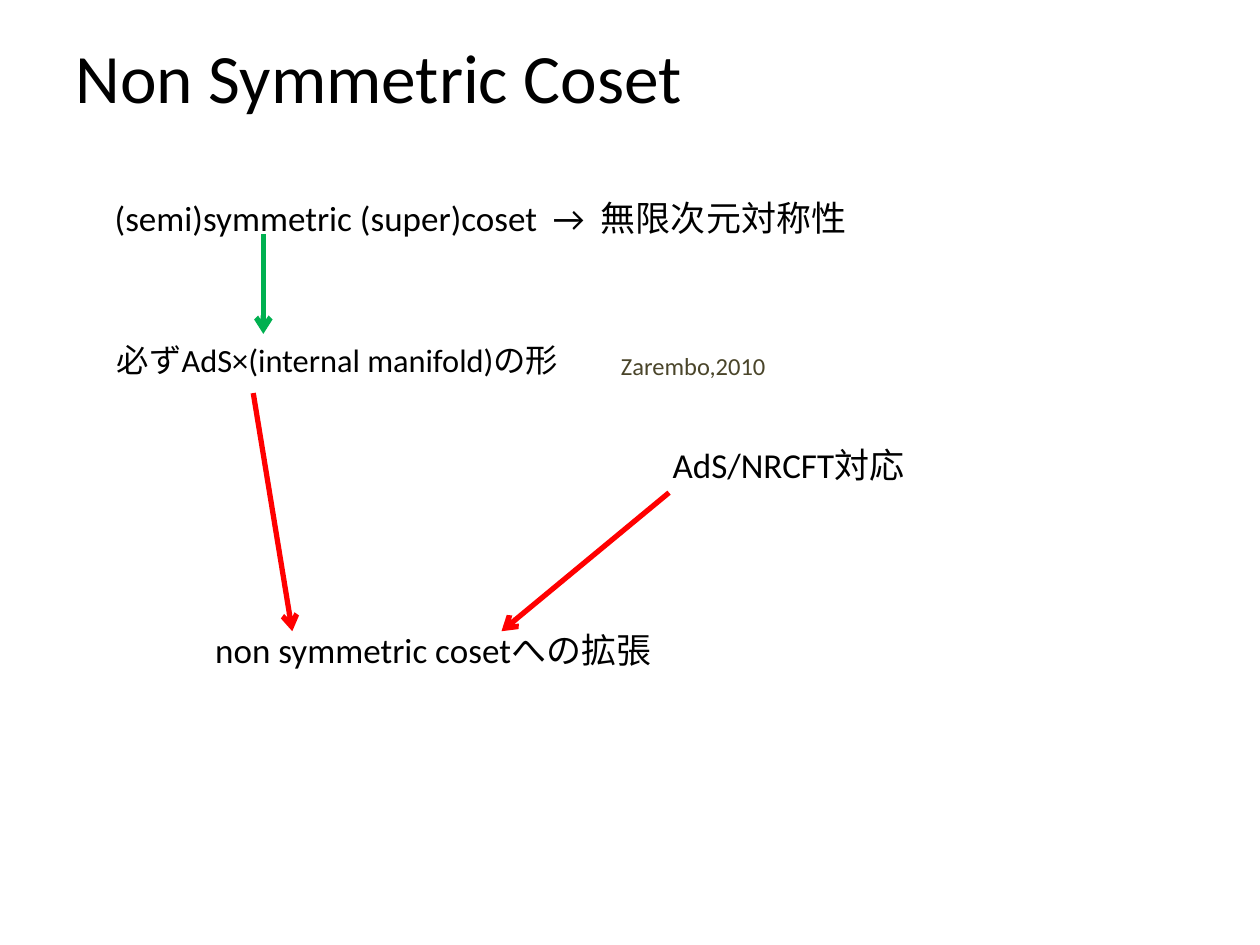
import pptx
import pptx.util
import pptx.dml.color
import pptx.enum.shapes
import pptx.enum.text
import pptx.oxml.ns
from lxml import etree

Inches, Pt = pptx.util.Inches, pptx.util.Pt
ANCHOR = pptx.enum.text.MSO_ANCHOR

COLORS = {"text": "000000", "citation": "4A452A", "implies": "00B050", "extends": "FF0000"}
FONT = "Calibri"
HANGING = 0.38

# Content: text, (left, top, width, height) in inches, format
TITLE = ("Non Symmetric Coset", (0.5, 0.3, 5.13, 0.61))
SYMMETRIC = ("(semi)symmetric (super)coset  →  無限次元対称性", (0.81, 1.51, 6.07, 0.43))
STATEMENTS = [
    ("non symmetric cosetへの拡張", (1.61, 4.98, 3.7, 0.43), {"spacing": 0.9}),
    ("AdS/NRCFT対応", (5.24, 3.51, 2.13, 0.43), {"spacing": 0.9}),
    ("必ずAdS×(internal manifold)の形", (0.83, 2.65, 4.02, 0.43), {"size": 18.5}),
    ("Zarembo,2010", (4.83, 2.74, 1.51, 0.38), {"size": 14, "color": "citation"}),
]
# Arrows: start, end, meaning
ARROWS = [
    ((2.09, 1.86), (2.09, 2.65), "implies"),
    ((2.01, 3.12), (2.32, 5.01), "extends"),
    ((5.31, 3.91), (3.98, 5.01), "extends"),
]


def rgb(name):
    return pptx.dml.color.RGBColor.from_string(COLORS[name])


def write(holder, text, box, size=20, color="text", spacing=1.0,
          hanging=HANGING, before=0.2, anchor=ANCHOR.TOP):
    """Place a text holder and fill it with one formatted paragraph."""
    holder.left, holder.top, holder.width, holder.height = map(Inches, box)
    frame = holder.text_frame
    frame.word_wrap = True
    frame.auto_size = pptx.enum.text.MSO_AUTO_SIZE.NONE
    frame.vertical_anchor = anchor
    paragraph = frame.paragraphs[0]
    paragraph.alignment = pptx.enum.text.PP_ALIGN.LEFT
    paragraph.line_spacing = spacing
    paragraph.space_before = Pt(size * before)
    run = paragraph.add_run()
    run.text = text
    run.font.name, run.font.size = FONT, Pt(size)
    run.font.color.rgb = rgb(color)
    # Hanging indent without a bullet
    properties = paragraph._p.get_or_add_pPr()
    properties.set("marL", str(Inches(hanging)))
    properties.set("indent", str(-Inches(hanging)))
    etree.SubElement(properties, pptx.oxml.ns.qn("a:buNone"))


def draw_arrow(slide, start, end, meaning):
    arrow = slide.shapes.add_connector(
        pptx.enum.shapes.MSO_CONNECTOR.STRAIGHT, *map(Inches, start + end))
    arrow.line.color.rgb = rgb(meaning)
    arrow.line.width = Pt(3)
    etree.SubElement(arrow.line._get_or_add_ln(), pptx.oxml.ns.qn("a:tailEnd"), type="arrow")
    etree.SubElement(arrow._element.spPr, pptx.oxml.ns.qn("a:effectLst"))


def main():
    deck = pptx.Presentation()
    deck.slide_width, deck.slide_height = Inches(10), Inches(7.5)
    slide = deck.slides.add_slide(deck.slide_layouts[1])

    # Title and leading statement
    write(slide.shapes.title, *TITLE, size=39.6, hanging=0, before=0, anchor=ANCHOR.MIDDLE)
    write(slide.placeholders[1], *SYMMETRIC)

    # Remaining statements and the arrows between them
    for text, box, style in STATEMENTS:
        write(slide.shapes.add_textbox(*map(Inches, box)), text, box, **style)
    for start, end, meaning in ARROWS:
        draw_arrow(slide, start, end, meaning)

    deck.save("out.pptx")


if __name__ == "__main__":
    main()
